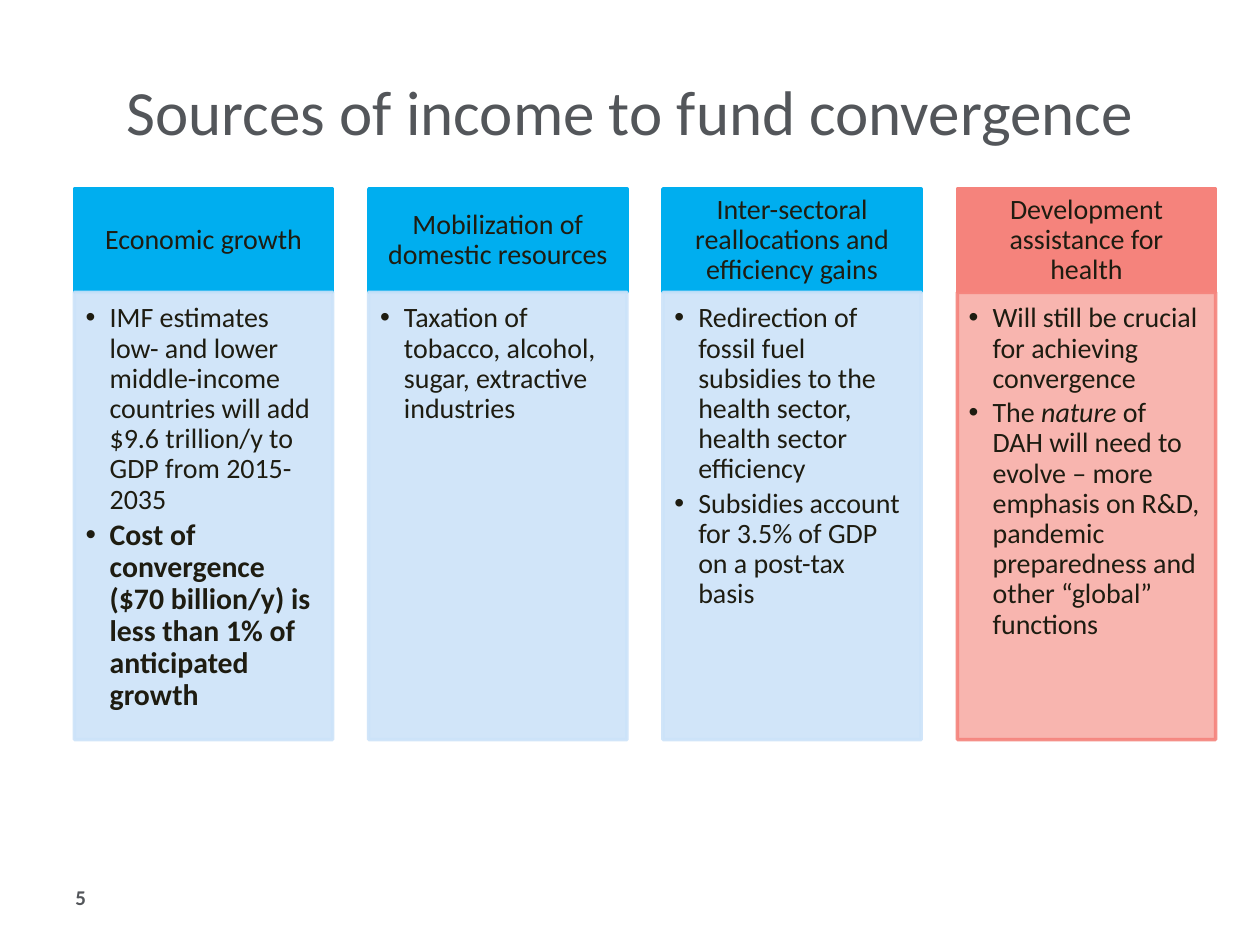
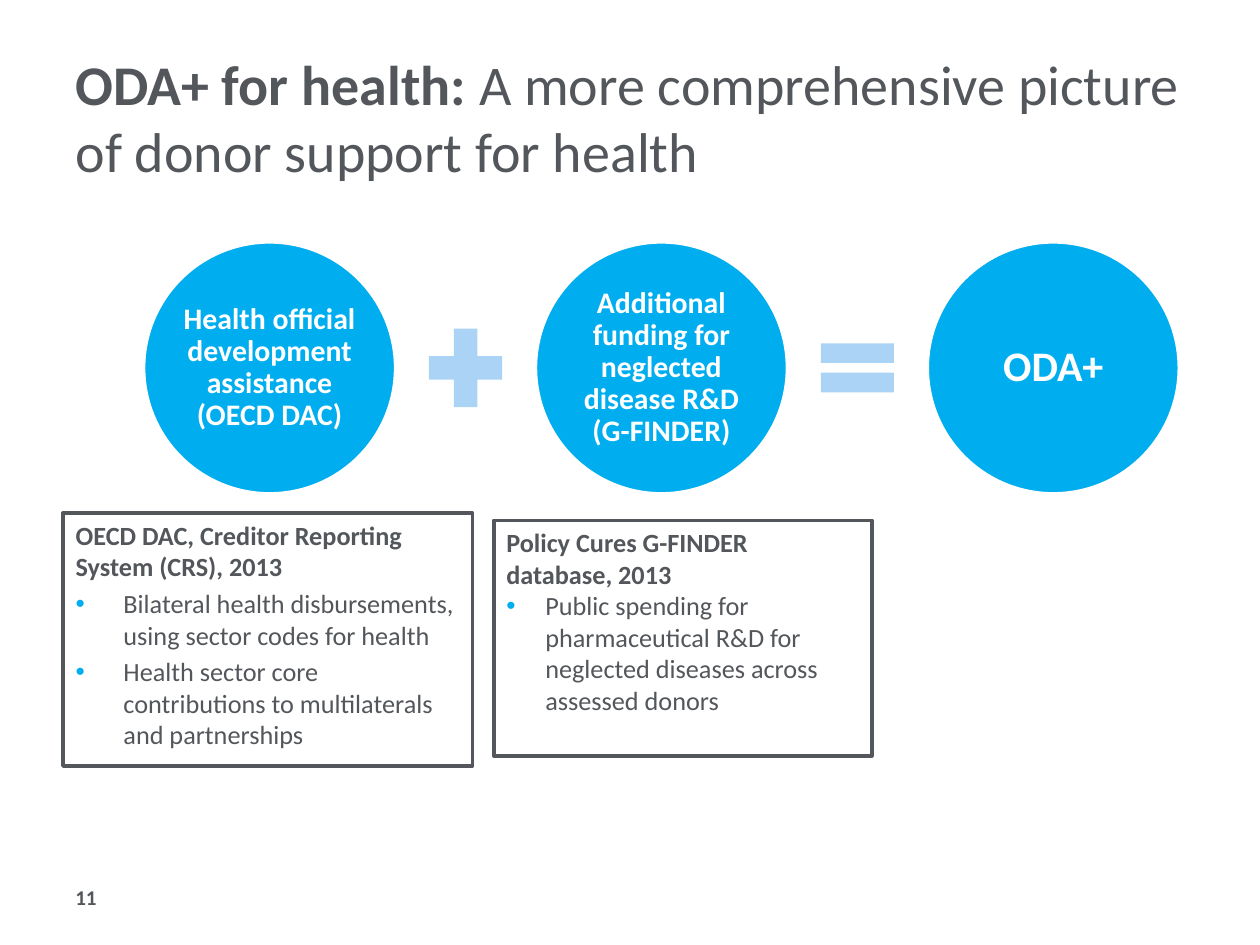
from lxml import etree
from pptx import Presentation
from pptx.dml.color import RGBColor
from pptx.enum.shapes import MSO_SHAPE
from pptx.enum.text import MSO_ANCHOR, MSO_AUTO_SIZE, PP_ALIGN
from pptx.oxml.ns import qn
from pptx.util import Inches, Pt

RECTANGLE = MSO_SHAPE.RECTANGLE
OVAL = MSO_SHAPE.OVAL
PLUS = MSO_SHAPE.MATH_PLUS
EQUAL = MSO_SHAPE.MATH_EQUAL
TOP, MIDDLE = MSO_ANCHOR.TOP, MSO_ANCHOR.MIDDLE
LEFT, CENTER = PP_ALIGN.LEFT, PP_ALIGN.CENTER
NO_AUTOFIT = MSO_AUTO_SIZE.NONE

FONT = "Calibri"
GREY, INK, WHITE = "53565A", "1E1C11", "FFFFFF"
BLUE, PALE_BLUE, SOFT_BLUE = "00AEEF", "CCE3F9", "ABD3F6"
RED, PALE_RED = "F5837C", "F8ADA7"
MARGIN = 0.5
DEFAULT_INSETS = (0.1, 0.05, 0.1, 0.05)

COLUMN_LEFT, COLUMN_STEP, COLUMN_WIDTH = 0.59, 2.336, 2.05
HEADER_TOP, HEADER_HEIGHT, LIST_HEIGHT = 1.5, 0.82, 3.55
CIRCLE_LEFT, CIRCLE_TOP, CIRCLE_STEP, CIRCLE_SIZE = 1.14, 1.92, 3.11, 2

INCOME_SOURCES = [
    ("Economic growth", BLUE, PALE_BLUE, PALE_BLUE, [
        [("IMF estimates low- and lower middle-income countries will add "
          "$9.6 trillion/y to GDP from 2015-2035", {})],
        [("Cost of convergence ($70 billion/y) is less than 1% of "
          "anticipated growth", {"size": 17, "bold": True})]]),
    ("Mobilization of domestic resources", BLUE, PALE_BLUE, PALE_BLUE, [
        [("Taxation of tobacco, alcohol, sugar, extractive industries", {})]]),
    ("Inter-sectoral reallocations and efficiency gains", BLUE, PALE_BLUE, PALE_BLUE, [
        [("Redirection of fossil fuel subsidies to the health sector, "
          "health sector efficiency", {})],
        [("Subsidies account for 3.5% of GDP on a post-tax basis", {})]]),
    ("Development assistance for health", RED, PALE_RED, RED, [
        [("Will still be crucial for achieving convergence", {})],
        [("The ", {}), ("nature", {"italic": True}),
         (" of DAH will need to evolve – more emphasis on R&D, pandemic "
          "preparedness and other “global” functions", {})]]),
]

ODA_TERMS = [
    ("Health official development assistance (OECD DAC)", 17),
    ("Additional funding for neglected disease R&D (G-FINDER)", 17),
    ("ODA+", 24),
]
OPERATORS = [(PLUS, 0.79, 0.85), (EQUAL, 0.79, 0.66)]


def color(value):
    return RGBColor.from_string(value)


def place(shape, left, top, width, height):
    shape.left, shape.top = Inches(left), Inches(top)
    shape.width, shape.height = Inches(width), Inches(height)


def paint(shape, fill, line=None, opacity=100):
    shape.fill.solid()
    shape.fill.fore_color.rgb = color(fill)
    if line:
        shape.line.color.rgb = color(line)
        shape.line.width = Pt(2)
    else:
        shape.line.fill.background()
    if opacity < 100:
        for tint in shape.element.spPr.iter(qn("a:srgbClr")):
            etree.SubElement(tint, qn("a:alpha"), val=str(opacity * 1000))


def add_figure(slide, kind, left, top, width, height, fill, line=None, opacity=100):
    shape = slide.shapes.add_shape(kind, Inches(left), Inches(top),
                                   Inches(width), Inches(height))
    shape.shadow.inherit = False
    paint(shape, fill, line, opacity)
    return shape


def set_frame(shape, anchor=TOP, insets=DEFAULT_INSETS):
    frame = shape.text_frame
    frame.word_wrap = True
    frame.auto_size = NO_AUTOFIT
    frame.vertical_anchor = anchor
    (frame.margin_left, frame.margin_top,
     frame.margin_right, frame.margin_bottom) = map(Inches, insets)
    return frame


def set_bullet(paragraph, indent, bullet_color=None):
    properties = paragraph._p.get_or_add_pPr()
    properties.set("marL", str(Inches(indent)))
    properties.set("indent", str(-Inches(indent)))
    if not indent:
        etree.SubElement(properties, qn("a:buNone"))
        return
    if bullet_color:
        holder = etree.SubElement(properties, qn("a:buClr"))
        etree.SubElement(holder, qn("a:srgbClr"), val=bullet_color)
    etree.SubElement(properties, qn("a:buFont"), typeface="Arial")
    etree.SubElement(properties, qn("a:buChar"), char="•")


def add_run(paragraph, text, size, text_color, bold=False, italic=False):
    run = paragraph.add_run()
    run.text = text
    font = run.font
    font.name, font.size, font.color.rgb = FONT, Pt(size), color(text_color)
    font.bold, font.italic = bold, italic


def write(frame, index, runs, size, text_color, align=LEFT, spacing=1.0,
          before=0, after=0, indent=0, bullet_color=None):
    paragraph = frame.add_paragraph() if index else frame.paragraphs[0]
    set_bullet(paragraph, indent, bullet_color)
    paragraph.alignment = align
    paragraph.line_spacing = spacing
    paragraph.space_before = Pt(before if index else 0)
    paragraph.space_after = Pt(after)
    for text, style in runs:
        add_run(paragraph, text, **{"size": size, "text_color": text_color, **style})


def start_slide(presentation, layout, title_runs, title_top, title_size, align, number):
    slide = presentation.slides.add_slide(presentation.slide_layouts[layout])
    title = slide.shapes.title
    place(title, MARGIN, title_top, 9, 1.25)
    write(set_frame(title, MIDDLE), 0, title_runs, title_size, GREY, align)
    footer = slide.shapes.add_textbox(Inches(MARGIN), Inches(6.92),
                                      Inches(2.33), Inches(0.4))
    write(set_frame(footer, MIDDLE), 0, [(number, {"bold": True})], 12, GREY)
    return slide


def add_income_column(slide, column, heading, header_fill, list_fill, list_line, points):
    left = COLUMN_LEFT + column * COLUMN_STEP
    header = add_figure(slide, RECTANGLE, left, HEADER_TOP, COLUMN_WIDTH,
                        HEADER_HEIGHT, header_fill, header_fill)
    write(set_frame(header, MIDDLE, (0.12, 0.07, 0.12, 0.07)), 0,
          [(heading, {})], 16, INK, CENTER, 0.9)
    panel = add_figure(slide, RECTANGLE, left, HEADER_TOP + HEADER_HEIGHT,
                       COLUMN_WIDTH, LIST_HEIGHT, list_fill, list_line, 90)
    frame = set_frame(panel, TOP, (0.09, 0.09, 0.12, 0.14))
    for index, runs in enumerate(points):
        write(frame, index, runs, 16, INK, spacing=0.9, after=2.4, indent=0.19)


def add_term(slide, column, text, size):
    circle = add_figure(slide, OVAL, CIRCLE_LEFT + column * CIRCLE_STEP, CIRCLE_TOP,
                        CIRCLE_SIZE, CIRCLE_SIZE, BLUE, WHITE)
    write(set_frame(circle, MIDDLE, (0.02,) * 4), 0,
          [(text, {"bold": True})], size, WHITE, CENTER, 0.9)


def add_operator(slide, column, kind, width, height):
    center_x = CIRCLE_LEFT + CIRCLE_SIZE / 2 + (column + 0.5) * CIRCLE_STEP
    center_y = CIRCLE_TOP + CIRCLE_SIZE / 2
    add_figure(slide, kind, center_x - width / 2, center_y - height / 2,
               width, height, SOFT_BLUE)


def fill_source_box(shape, heading, points, indent, before=0):
    frame = set_frame(shape)
    write(frame, 0, [(heading, {"bold": True})], 15, GREY)
    for index, point in enumerate(points, 1):
        write(frame, index, [(point, {})], 15, GREY, before=before,
              indent=indent, bullet_color=BLUE)


def build_income_slide(presentation):
    slide = start_slide(presentation, 5, [("Sources of income to fund convergence", {})],
                        0.25, 36, CENTER, "5")
    for column, source in enumerate(INCOME_SOURCES):
        add_income_column(slide, column, *source)


def build_oda_slide(presentation):
    slide = start_slide(
        presentation, 1,
        [("ODA+ for health: ", {"bold": True}),
         ("A more comprehensive picture of donor support for health", {})],
        0.3, 32, LEFT, "11")
    creditor_box = slide.placeholders[1]
    place(creditor_box, MARGIN, 4.07, 3.25, 2.01)
    paint(creditor_box, WHITE, GREY)
    fill_source_box(creditor_box, "OECD DAC, Creditor Reporting System (CRS), 2013",
                    ["Bilateral health disbursements, using sector codes for health",
                     "Health sector core contributions to multilaterals and partnerships"],
                    0.38, before=3)
    for column, term in enumerate(ODA_TERMS):
        add_term(slide, column, *term)
    for column, operator in enumerate(OPERATORS):
        add_operator(slide, column, *operator)
    finder_box = add_figure(slide, RECTANGLE, 3.92, 4.13, 3, 1.87, WHITE, GREY)
    fill_source_box(finder_box, "Policy Cures G-FINDER database, 2013",
                    ["Public spending for pharmaceutical R&D for neglected "
                     "diseases across assessed donors"], 0.31)


def main():
    presentation = Presentation()
    presentation.slide_width, presentation.slide_height = Inches(10), Inches(7.5)
    build_income_slide(presentation)
    build_oda_slide(presentation)
    presentation.save("out.pptx")


if __name__ == "__main__":
    main()
